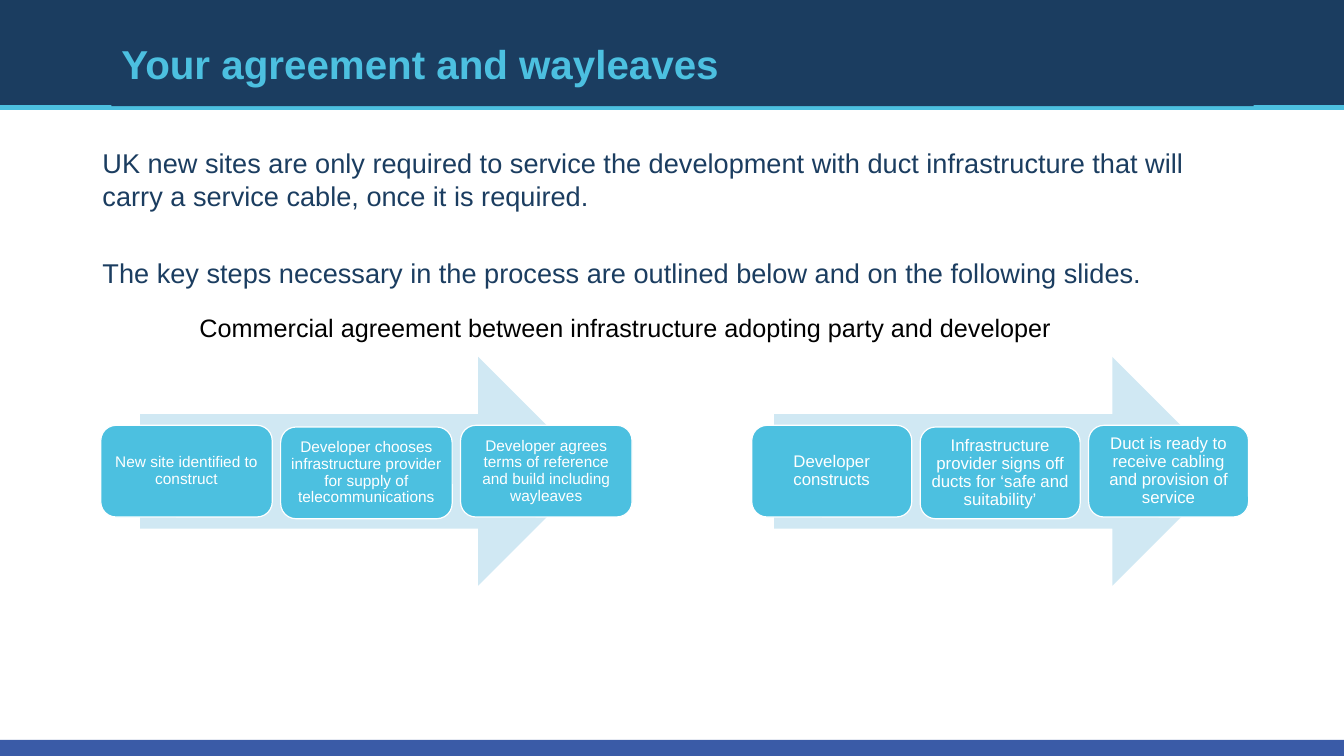
from lxml import etree
from pptx import Presentation, util as u
from pptx.dml.color import RGBColor
from pptx.enum import shapes, text
from pptx.oxml import ns

NAVY = RGBColor(0x1B, 0x3D, 0x60)
CYAN = RGBColor(0x4C, 0xC0, 0xE0)
PALE_BLUE = RGBColor(0xD0, 0xE8, 0xF3)
FOOTER_BLUE = RGBColor(0x3A, 0x5B, 0xA7)
WHITE = RGBColor(0xFF, 0xFF, 0xFF)
BLACK = RGBColor(0, 0, 0)

WIDTH, HEIGHT = 960, 540
HEADER_HEIGHT, FOOTER_HEIGHT = 77, 11.5
STEP_TOP, STEP_HEIGHT, MIDDLE_DROP = 303.8, 65.5, 1.2
STEP_GAP = 6


class SlideBuilder:
    """Holds the font and the current slide; all lengths are in points."""

    def __init__(self, slide, font_name="Arial"):
        self.slide = slide
        self.font_name = font_name

    def style(self, text_frame, size, color, bold=False):
        for paragraph in text_frame.paragraphs:
            for run in paragraph.runs:
                run.font.name = self.font_name
                run.font.size = u.Pt(size)
                run.font.bold = bold
                run.font.color.rgb = color

    def placeholder(self, index, left, top, width, height):
        shape = self.slide.placeholders[index]
        shape.left, shape.top = u.Pt(left), u.Pt(top)
        shape.width, shape.height = u.Pt(width), u.Pt(height)
        # Bring in front of the bars drawn before it
        self.slide.shapes._spTree.append(shape._element)
        return shape

    def title(self, wording, box, size):
        shape = self.placeholder(0, *box)
        shape.fill.solid()
        shape.fill.fore_color.rgb = NAVY
        text_frame = shape.text_frame
        text_frame.text = wording
        text_frame.vertical_anchor = text.MSO_ANCHOR.MIDDLE
        text_frame.paragraphs[0].alignment = text.PP_ALIGN.LEFT
        self.style(text_frame, size, CYAN, bold=True)

    def body(self, wordings, box, size, space):
        text_frame = self.placeholder(1, *box).text_frame
        text_frame.text = "\n".join(wordings)
        text_frame.auto_size = text.MSO_AUTO_SIZE.NONE
        for number, paragraph in enumerate(text_frame.paragraphs):
            properties = paragraph._p.get_or_add_pPr()
            properties.set("marL", "0")
            properties.set("indent", "0")
            etree.SubElement(properties, ns.qn("a:buNone"))
            paragraph.space_before = u.Pt(space if number else 0)
        self.style(text_frame, size, NAVY)

    def shape(self, kind, left, top, width, height, fill, line=None):
        shape = self.slide.shapes.add_shape(
            kind, u.Pt(left), u.Pt(top), u.Pt(width), u.Pt(height))
        shape.shadow.inherit = False
        shape.fill.solid()
        shape.fill.fore_color.rgb = fill
        if line is None:
            shape.line.fill.background()
        else:
            shape.line.color.rgb = line
            shape.line.width = u.Pt(0.85)
        return shape

    def rule(self, top, width, color):
        line = self.slide.shapes.add_connector(
            shapes.MSO_CONNECTOR.STRAIGHT, 0, u.Pt(top), u.Pt(WIDTH), u.Pt(top))
        line.line.color.rgb = color
        line.line.width = u.Pt(width)
        etree.SubElement(line._element.spPr, ns.qn("a:effectLst"))

    def label(self, wording, left, top, width, height, size):
        box = self.slide.shapes.add_textbox(
            u.Pt(left), u.Pt(top), u.Pt(width), u.Pt(height))
        box.text_frame.word_wrap = True
        box.text_frame.text = wording
        self.style(box.text_frame, size, BLACK)

    def step(self, wording, left, top, width, size):
        shape = self.shape(shapes.MSO_SHAPE.ROUNDED_RECTANGLE,
                           left, top, width, STEP_HEIGHT, CYAN, WHITE)
        text_frame = shape.text_frame
        text_frame.text = wording
        text_frame.word_wrap = True
        text_frame.vertical_anchor = text.MSO_ANCHOR.MIDDLE
        text_frame.margin_left = text_frame.margin_right = u.Pt(3.4)
        text_frame.margin_top = text_frame.margin_bottom = u.Pt(3.4)
        text_frame.paragraphs[0].alignment = text.PP_ALIGN.CENTER
        text_frame.paragraphs[0].line_spacing = 0.9
        self.style(text_frame, size, WHITE)

    def process(self, arrow_left, step_left, step_width, size, wordings):
        self.shape(shapes.MSO_SHAPE.RIGHT_ARROW,
                   arrow_left, 255, 323.3, 163.4, PALE_BLUE)
        for number, wording in enumerate(wordings):
            self.step(wording, step_left + number * (step_width + STEP_GAP),
                      STEP_TOP + MIDDLE_DROP * (number % 2), step_width, size)


def main():
    presentation = Presentation()
    presentation.slide_width = u.Pt(WIDTH)
    presentation.slide_height = u.Pt(HEIGHT)
    slide = presentation.slides.add_slide(presentation.slide_layouts[1])
    builder = SlideBuilder(slide)

    # Header and footer bars
    rectangle = shapes.MSO_SHAPE.RECTANGLE
    builder.shape(rectangle, 0, HEIGHT - FOOTER_HEIGHT, WIDTH, FOOTER_HEIGHT,
                  FOOTER_BLUE)
    builder.shape(rectangle, 0, 0, WIDTH, HEADER_HEIGHT, NAVY)
    builder.rule(HEADER_HEIGHT, 3.5, CYAN)

    # Title and introduction
    builder.title("Your agreement and wayleaves", (79.5, 15.3, 816, 60.5), 28.8)
    builder.body(
        ["UK new sites are only required to service the development with duct "
         "infrastructure that will carry a service cable, once it is required.",
         "The key steps necessary in the process are outlined below and on the "
         "following slides."],
        (66, 101, 816, 93.6), 19.4, 32)

    # Two three-step processes
    builder.process(100, 72, 122.5, 11, [
        "New site identified to construct",
        "Developer chooses infrastructure provider for supply of "
        "telecommunications",
        "Developer agrees terms of reference and build including wayleaves"])
    builder.process(553, 537, 114.3, 12, [
        "Developer constructs",
        "Infrastructure provider signs off ducts for ‘safe and suitability’",
        "Duct is ready to receive cabling and provision of service"])

    # Caption above the arrows
    builder.label("Commercial agreement between infrastructure adopting party "
                  "and developer", 135.4, 219.8, 633.6, 29, 18)

    presentation.save("out.pptx")


if __name__ == "__main__":
    main()
